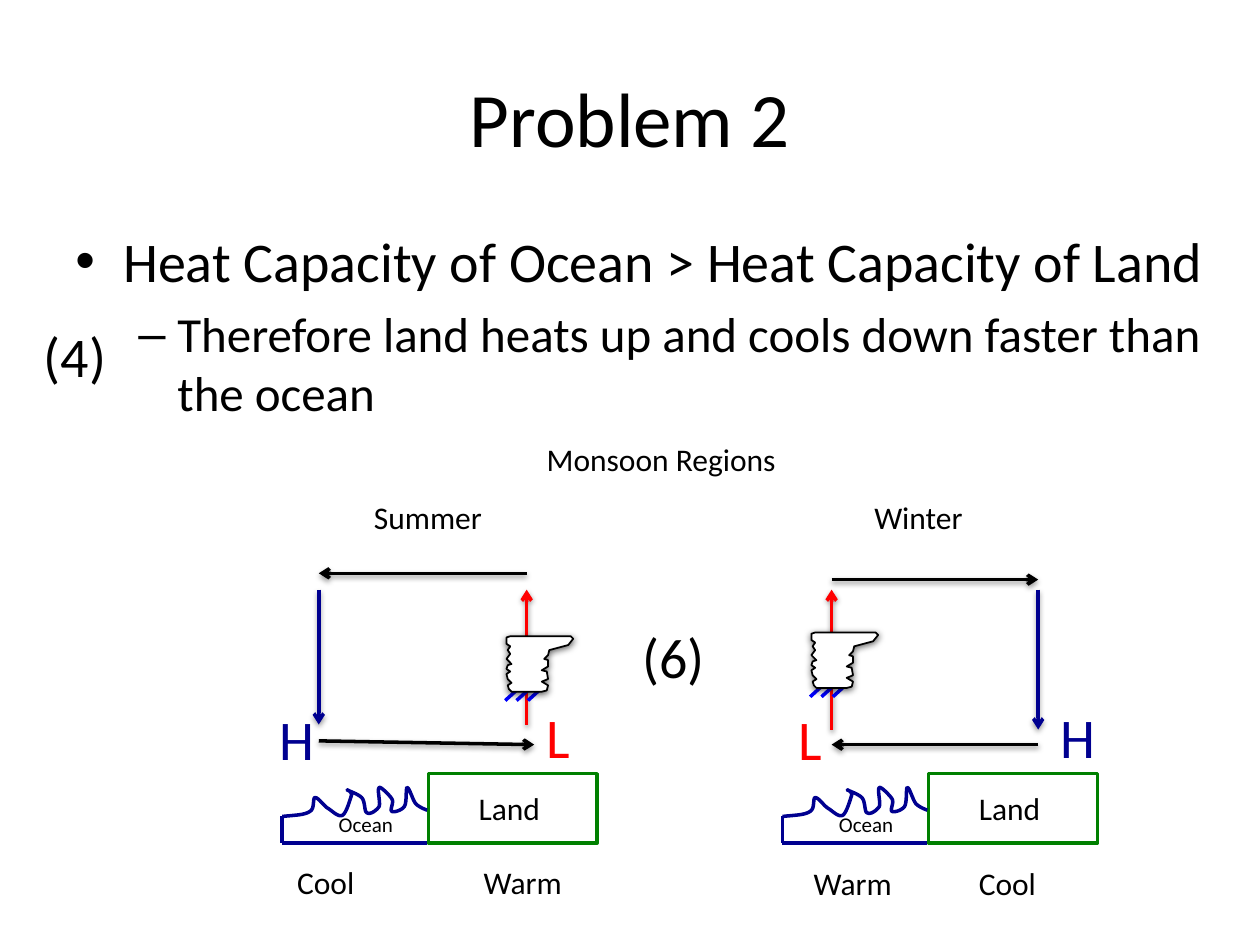
from lxml.etree import SubElement
from pptx import Presentation
from pptx.dml.color import RGBColor
from pptx.enum.shapes import MSO_CONNECTOR, MSO_SHAPE
from pptx.enum.text import MSO_ANCHOR, MSO_AUTO_SIZE, PP_ALIGN
from pptx.oxml.ns import qn
from pptx.util import Inches, Pt

COLORS = {"black": "000000", "white": "FFFFFF", "red": "FF0000",
          "navy": "000090", "blue": "0000FF", "green": "008000"}

WAVE = [(0, 23),
        (9, 22), (18, 22), (22, 19), (26, 17), (24, 8), (26, 8),
        (29, 8), (33, 15), (37, 17), (40, 19), (45, 24), (48, 22),
        (51, 20), (54, 9), (55, 6), (55, 2), (50, 2), (52, 2),
        (53, 3), (60, 5), (63, 8), (66, 11), (65, 19), (67, 20),
        (70, 22), (75, 18), (77, 15), (78, 11), (75, 1), (77, 0),
        (78, -1), (85, 6), (87, 9), (89, 12), (85, 18), (87, 19),
        (89, 20), (95, 18), (97, 15), (99, 12), (98, 0), (99, 0),
        (101, 0), (103, 9), (106, 13), (109, 16), (115, 18), (115, 18)]

HAND = [(4, 44), (28, 44), (32, 43), (33, 39), (28, 36), (33, 34), (32, 28),
        (28, 27), (33, 24), (33, 19), (30, 18), (33, 15), (34, 11), (49, 7),
        (53, 2), (51, 0), (3, 0), (0, 1), (0, 6), (3, 8), (1, 11), (3, 14),
        (0, 18), (4, 22), (1, 23), (0, 26), (3, 28), (0, 30), (1, 34),
        (4, 37), (1, 39), (2, 42)]


def curve(nodes, steps=8):
    points = [nodes[0]]
    for i in range(0, len(nodes) - 1, 3):
        a, b, c, d = nodes[i:i + 4]
        for n in range(1, steps + 1):
            t = n / steps
            u = 1 - t
            points.append(tuple(
                u**3 * a[k] + 3 * u * u * t * b[k] + 3 * u * t * t * c[k] + t**3 * d[k]
                for k in (0, 1)))
    return points


class Deck:
    font = "Calibri"

    def __init__(self):
        self.prs = Presentation()
        self.prs.slide_width, self.prs.slide_height = Inches(10), Inches(7.5)
        self.slide = self.prs.slides.add_slide(self.prs.slide_layouts[5])
        self.shapes = self.slide.shapes

    def color(self, name):
        return RGBColor.from_string(COLORS[name])

    def style(self, para, size, color="black"):
        for run in para.runs:
            run.font.name, run.font.size = self.font, Pt(size)
            run.font.color.rgb = self.color(color)

    def title(self, text, x, y, w, h):
        box = self.shapes.title
        box.left, box.top, box.width, box.height = map(Inches, (x, y, w, h))
        frame = box.text_frame
        frame.text, frame.vertical_anchor = text, MSO_ANCHOR.MIDDLE
        frame.paragraphs[0].alignment = PP_ALIGN.CENTER
        self.style(frame.paragraphs[0], 44)

    def bullets(self, items, x, y, w, h):
        frame = self.shapes.add_textbox(*map(Inches, (x, y, w, h))).text_frame
        frame.word_wrap = True
        for i, (text, mark, size, left, hang) in enumerate(items):
            para = frame.add_paragraph() if i else frame.paragraphs[0]
            para.text, para.level = text, i
            para.space_before = Pt(size * 0.2)
            self.style(para, size)
            props = para._p.get_or_add_pPr()
            props.set("marL", str(Inches(left)))
            props.set("indent", str(-Inches(hang)))
            SubElement(props, qn("a:buFont")).set("typeface", "Arial")
            SubElement(props, qn("a:buChar")).set("char", mark)

    def label(self, text, x, y, w, h=0.4, size=18, color="black"):
        frame = self.shapes.add_textbox(*map(Inches, (x, y, w, h))).text_frame
        frame.text, frame.word_wrap = text, False
        frame.auto_size = MSO_AUTO_SIZE.SHAPE_TO_FIT_TEXT
        self.style(frame.paragraphs[0], size, color)

    def shadow(self, effects, blur, dist, alpha):
        outer = SubElement(effects, qn("a:outerShdw"), blurRad=str(Pt(blur)),
                           dist=str(Pt(dist)), dir="5400000", rotWithShape="0")
        tone = SubElement(outer, qn("a:srgbClr"), val=COLORS["black"])
        SubElement(tone, qn("a:alpha"), val=str(alpha * 1000))

    def line(self, start, end, color, shapes=None):
        line = (shapes or self.shapes).add_connector(
            MSO_CONNECTOR.STRAIGHT, *map(Inches, (*start, *end)))
        line.line.color.rgb, line.line.width = self.color(color), Pt(2)
        return line, SubElement(line._element.spPr, qn("a:effectLst"))

    def arrow(self, start, end, color):
        line, effects = self.line(start, end, color)
        SubElement(line.line._get_or_add_ln(), qn("a:tailEnd"), type="arrow")
        self.shadow(effects, 3.1, 1.6, 38)

    def rect(self, x, y, w, h, color):
        box = self.shapes.add_shape(MSO_SHAPE.RECTANGLE, *map(Inches, (x, y, w, h)))
        box.shadow.inherit = False
        box.fill.background()
        box.line.color.rgb, box.line.width = self.color(color), Pt(2)

    def outline(self, points, x, y, color, width, fill=None, shapes=None):
        spots = [(Inches(x + a / 100), Inches(y + b / 100)) for a, b in points]
        pen = (shapes or self.shapes).build_freeform(*spots[0])
        pen.add_line_segments(spots[1:], close=bool(fill))
        form = pen.convert_to_shape()
        form.shadow.inherit = False
        form.line.color.rgb, form.line.width = self.color(color), Pt(width)
        if fill:
            form.fill.solid()
            form.fill.fore_color.rgb = self.color(fill)
        else:
            form.fill.background()
        return form

    def ground(self, x, y):
        self.rect(x + 1.16, y - 0.11, 1.34, 0.55, "green")
        self.outline(curve(WAVE), x, y, "navy", 2)
        self.line((x, y + 0.23), (x, y + 0.44), "navy")
        self.line((x, y + 0.44), (x + 1.15, y + 0.44), "navy")
        self.label("Land", x + 1.46, y - 0.04, 0.69)
        self.label("Ocean", x + 0.35, y + 0.14, 0.64, 0.3, 12)

    def hand(self, x, y):
        group = self.shapes.add_group_shape().shapes
        for i in range(3):
            left = x + 0.28 - i * 0.09
            self.line((left, y + 0.41), (left - 0.11, y + 0.51), "blue", group)
        form = self.outline(HAND, x, y, "black", 1, "white", group)
        self.shadow(form._element.spPr.find(qn("a:effectLst")), 4, 1, 60)


def main():
    deck = Deck()
    deck.title("Problem 2", 0.5, 0.3, 9, 1.25)
    deck.bullets([
        ("Heat Capacity of Ocean > Heat Capacity of Land", "•", 32, 0.38, 0.38),
        ("Therefore land heats up and cools down faster than the ocean",
         "–", 28, 0.81, 0.31)], 0.5, 1.75, 9.2, 1.7)

    for start, end, color in [
            ((2.53, 5.88), (4.24, 5.91), "black"),
            ((4.18, 5.75), (4.18, 4.68), "red"),
            ((4.18, 4.55), (2.53, 4.55), "black"),
            ((2.53, 4.68), (2.53, 5.75), "navy"),
            ((8.24, 5.91), (6.6, 5.91), "black"),
            ((8.24, 4.68), (8.24, 5.79), "navy"),
            ((6.6, 4.6), (8.24, 4.6), "black"),
            ((6.6, 5.79), (6.6, 4.68), "red")]:
        deck.arrow(start, end, color)

    for x in (2.24, 6.21):
        deck.ground(x, 6.25)
    deck.hand(4.02, 5.05)
    deck.hand(6.44, 5.02)

    for text, x, y, w in [
            ("Cool", 2.26, 6.8, 0.66), ("Warm", 3.74, 6.8, 0.84),
            ("Cool", 7.67, 6.81, 0.66), ("Warm", 6.36, 6.81, 0.84),
            ("Summer", 2.87, 3.9, 1.07), ("Winter", 6.84, 3.9, 0.92),
            ("Monsoon Regions", 4.24, 3.44, 2.04)]:
        deck.label(text, x, y, w)

    for text, x, y, w, color in [
            ("H", 2.12, 5.54, 0.48, "navy"), ("L", 4.24, 5.53, 0.39, "red"),
            ("H", 8.32, 5.53, 0.48, "navy"), ("L", 6.24, 5.54, 0.39, "red"),
            ("(4)", 0.25, 2.5, 0.7, "black"), ("(6)", 5, 4.89, 0.7, "black")]:
        deck.label(text, x, y, w, 0.64, 32, color)

    deck.prs.save("out.pptx")


if __name__ == "__main__":
    main()
